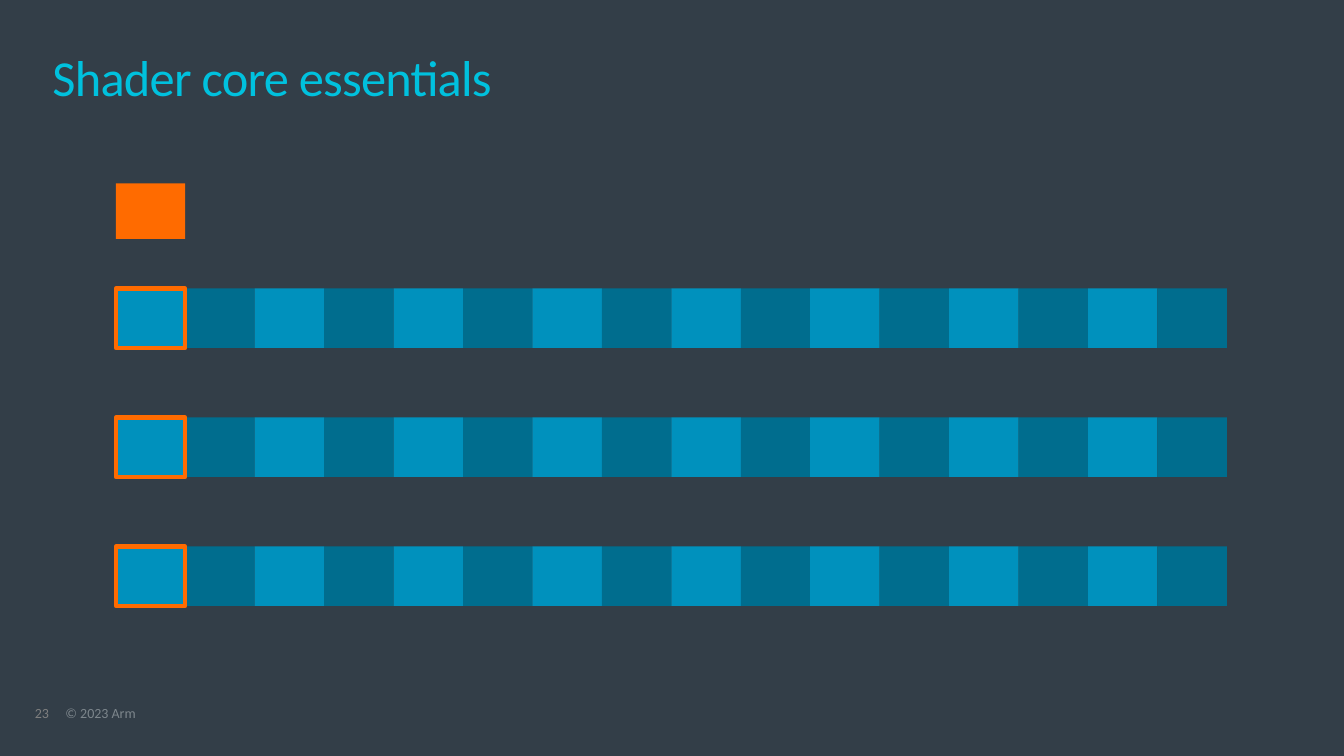
from pptx import Presentation
from pptx.dml.color import RGBColor
from pptx.enum import shapes, text
from pptx.util import Cm, Pt

BACKGROUND = RGBColor(0x33, 0x3E, 0x48)
CYAN = RGBColor(0x00, 0xC1, 0xDE)
ORANGE = RGBColor(0xFF, 0x6B, 0x00)
LIGHT_BLUE = RGBColor(0x00, 0x91, 0xBD)
DARK_BLUE = RGBColor(0x00, 0x6D, 0x8E)
NUMBER_GREY = RGBColor(0x7F, 0x7F, 0x7F)
COPYRIGHT_GREY = RGBColor(0x7D, 0x86, 0x8C)

CELL_WIDTH = 1.75
LANES = 16
ROWS = 3
ROW_PITCH = 3.25


def add_label(slide, box, wording, size, color, line_spacing, anchor, tracking=0):
    frame = slide.shapes.add_textbox(*map(Cm, box)).text_frame
    settings = {"margin_left": 0, "margin_top": 0, "margin_right": 0,
                "margin_bottom": 0, "word_wrap": True, "vertical_anchor": anchor}
    for name, value in settings.items():
        setattr(frame, name, value)
    paragraph = frame.paragraphs[0]
    paragraph.line_spacing = line_spacing
    run = paragraph.add_run()
    run.text = wording
    for name, value in {"name": "Calibri", "size": Pt(size)}.items():
        setattr(run.font, name, value)
    run.font.color.rgb = color
    if tracking:
        run.font._element.set("spc", str(round(tracking * 100)))


def add_cell(slide, box, fill=None, outline=None):
    cell = slide.shapes.add_shape(shapes.MSO_SHAPE.RECTANGLE, *map(Cm, box))
    cell.shadow.inherit = False
    if fill is None:
        cell.fill.background()
    else:
        cell.fill.solid()
        cell.fill.fore_color.rgb = fill
    if outline is None:
        cell.line.fill.background()
    else:
        cell.line.color.rgb = outline
        cell.line.width = Pt(3)


def add_lane_row(slide, left, top, height):
    """Draw alternating lanes, the first one outlined."""
    for lane in range(LANES):
        fill = DARK_BLUE if lane % 2 else LIGHT_BLUE
        add_cell(slide, (left + lane * CELL_WIDTH, top, CELL_WIDTH, height), fill)
    add_cell(slide, (left, top, CELL_WIDTH, height), outline=ORANGE)


def add_shader_core(slide, left, top):
    """Draw the single orange cell and the lane rows below it."""
    add_cell(slide, (left, top, CELL_WIDTH, 1.4), ORANGE)
    for row in range(ROWS):
        add_lane_row(slide, left, top + 2.65 + row * ROW_PITCH, 1.5)


def add_footer(slide, left, top):
    anchor = text.MSO_ANCHOR.TOP
    add_label(slide, (left, top, 0.75, 0.39), "23", 10, NUMBER_GREY, 0.9, anchor)
    add_label(slide, (left + 0.77, top, 12.87, 0.39), "© 2023 Arm", 10,
              COPYRIGHT_GREY, 0.9, anchor)


def main():
    deck = Presentation()
    deck.slide_width, deck.slide_height = Cm(33.87), Cm(19.05)
    slide = deck.slides.add_slide(deck.slide_layouts[6])
    slide.background.fill.solid()
    slide.background.fill.fore_color.rgb = BACKGROUND
    add_footer(slide, 0.88, 17.8)
    add_label(slide, (1.32, 1.32, 31.19, 1.45), "Shader core essentials", 36,
              CYAN, 0.85, text.MSO_ANCHOR.MIDDLE, tracking=-0.5)
    add_shader_core(slide, 2.92, 4.62)
    deck.save("out.pptx")


if __name__ == "__main__":
    main()
